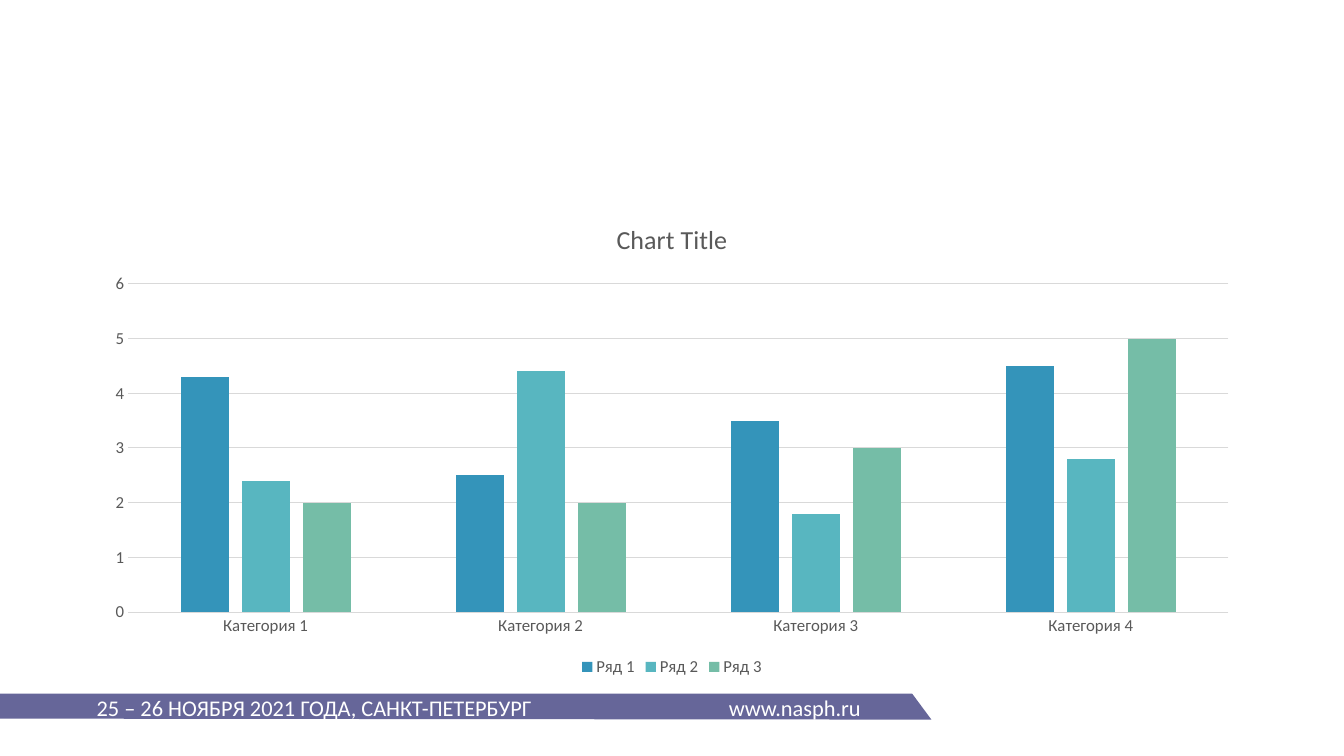
from dataclasses import dataclass

from lxml import etree
from pptx import Presentation
from pptx.chart.data import CategoryChartData
from pptx.dml.color import RGBColor
from pptx.enum.chart import XL_CHART_TYPE, XL_LEGEND_POSITION, XL_TICK_MARK
from pptx.oxml.ns import qn
from pptx.util import Pt

COLUMN_CLUSTERED = XL_CHART_TYPE.COLUMN_CLUSTERED
LEGEND_BOTTOM = XL_LEGEND_POSITION.BOTTOM
NO_TICKS = XL_TICK_MARK.NONE

FONT_NAME = "Calibri"
BLANK_LAYOUT = 6
COLORS = {
    "band": "666699",
    "white": "FFFFFF",
    "label": "595959",
    "grid": "D9D9D9",
    "blue": "3494BA",
    "teal": "58B6C0",
    "green": "75BDA7",
}
CATEGORIES = [f"Категория {number}" for number in range(1, 5)]


@dataclass(frozen=True)
class ColumnSeries:
    name: str
    values: tuple[float, ...]
    color: str


SERIES = (
    ColumnSeries("Ряд 1", (4.3, 2.5, 3.5, 4.5), "blue"),
    ColumnSeries("Ряд 2", (2.4, 4.4, 1.8, 2.8), "teal"),
    ColumnSeries("Ряд 3", (2, 2, 3, 5), "green"),
)


def rgb(name: str) -> RGBColor:
    return RGBColor.from_string(COLORS[name])


def format_font(font, size: float, color: str) -> None:
    font.name = FONT_NAME
    font.size = Pt(size)
    font.bold = False
    font.color.rgb = rgb(color)


def format_line(line) -> None:
    line.color.rgb = rgb("grid")
    line.width = Pt(0.75)


def add_footer_band(slide) -> None:
    builder = slide.shapes.build_freeform(Pt(665.3), Pt(514), scale=1.0)
    corners = ((651.6, 495.5), (0, 495.5), (-0.7, 513.3))
    builder.add_line_segments([(Pt(x), Pt(y)) for x, y in corners], close=True)
    band = builder.convert_to_shape()
    band.shadow.inherit = False
    band.fill.solid()
    band.fill.fore_color.rgb = rgb("band")
    band.line.fill.background()


def add_footer_text(slide) -> None:
    box = slide.shapes.add_textbox(Pt(62), Pt(492), Pt(566.6), Pt(26.6))
    box.text_frame.word_wrap = True
    paragraph = box.text_frame.paragraphs[0]
    paragraph.text = "25 – 26 НОЯБРЯ 2021 ГОДА, САНКТ-ПЕТЕРБУРГ\twww.nasph.ru"
    properties = paragraph._p.get_or_add_pPr()
    tab_list = etree.SubElement(properties, qn("a:tabLst"))
    etree.SubElement(tab_list, qn("a:tab"), pos=str(Pt(451.5)), algn="l")
    for run in paragraph.runs:
        format_font(run.font, 16, "white")


def add_column_chart(slide) -> None:
    data = CategoryChartData()
    data.categories = CATEGORIES
    for series in SERIES:
        data.add_series(series.name, series.values)
    chart = slide.shapes.add_chart(
        COLUMN_CLUSTERED, Pt(66), Pt(143.75), Pt(828), Pt(342.6), data
    ).chart
    format_font(chart.font, 12, "label")

    chart.has_title = True
    title = chart.chart_title
    title.include_in_layout = False
    paragraph = title.text_frame.paragraphs[0]
    paragraph.text = "Chart Title"
    format_font(paragraph.runs[0].font, 18.6, "label")

    chart.has_legend = True
    chart.legend.position = LEGEND_BOTTOM
    chart.legend.include_in_layout = False
    format_font(chart.legend.font, 12, "label")

    for axis in (chart.category_axis, chart.value_axis):
        axis.major_tick_mark = NO_TICKS
        axis.minor_tick_mark = NO_TICKS
        format_font(axis.tick_labels.font, 12, "label")
    format_line(chart.category_axis.format.line)

    value_axis = chart.value_axis
    value_axis.minimum_scale = 0
    value_axis.maximum_scale = 6
    value_axis.major_unit = 1
    value_axis.format.line.fill.background()
    value_axis.has_major_gridlines = True
    format_line(value_axis.major_gridlines.format.line)

    plot = chart.plots[0]
    plot.vary_by_categories = False
    plot.gap_width = 219
    plot.overlap = -27
    for plotted, series in zip(plot.series, SERIES):
        plotted.format.fill.solid()
        plotted.format.fill.fore_color.rgb = rgb(series.color)
        plotted.format.line.fill.background()


def main() -> None:
    presentation = Presentation()
    presentation.slide_width = Pt(960)
    presentation.slide_height = Pt(540)
    slide = presentation.slides.add_slide(presentation.slide_layouts[BLANK_LAYOUT])
    add_footer_band(slide)
    add_footer_text(slide)
    add_column_chart(slide)
    presentation.save("out.pptx")


if __name__ == "__main__":
    main()
